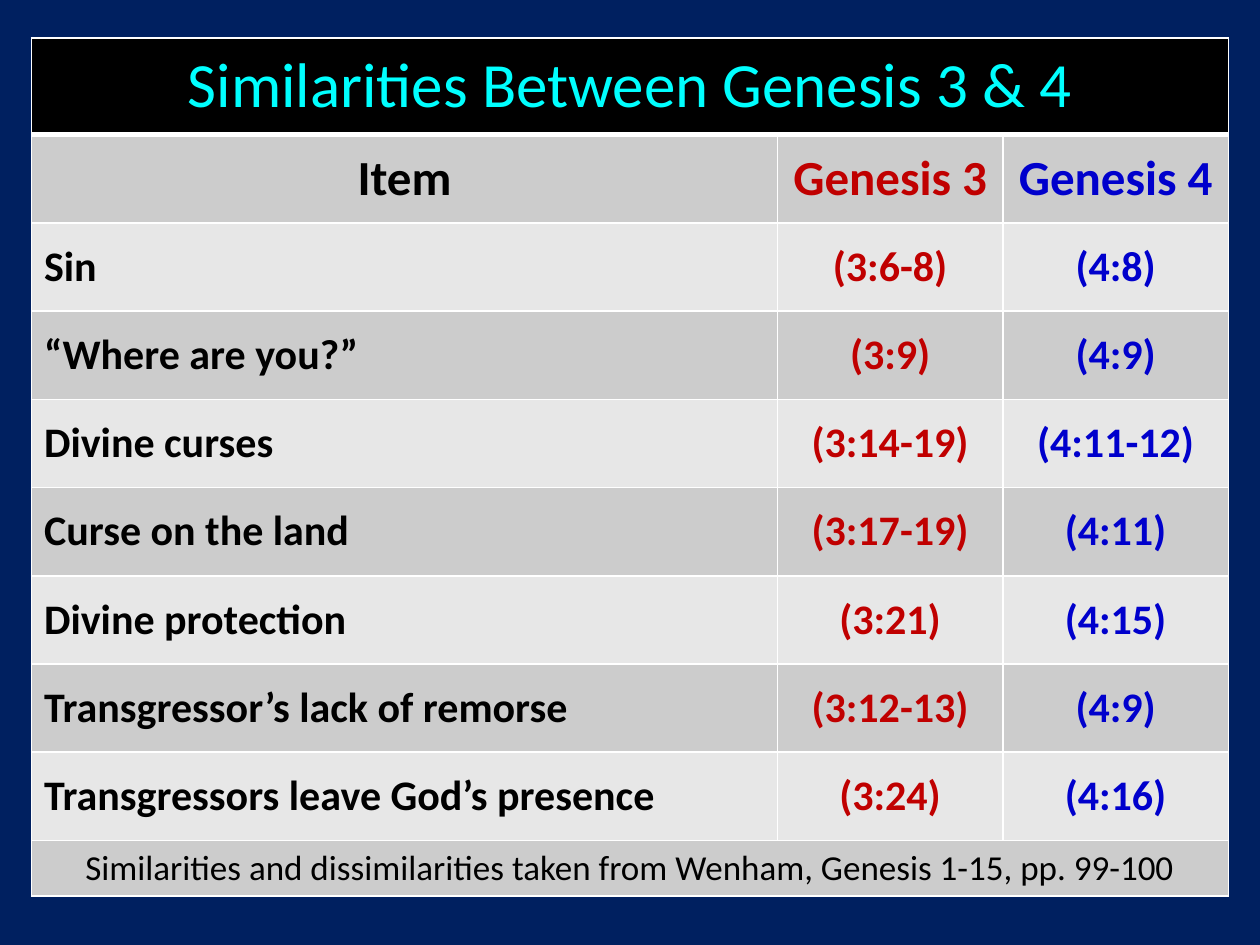
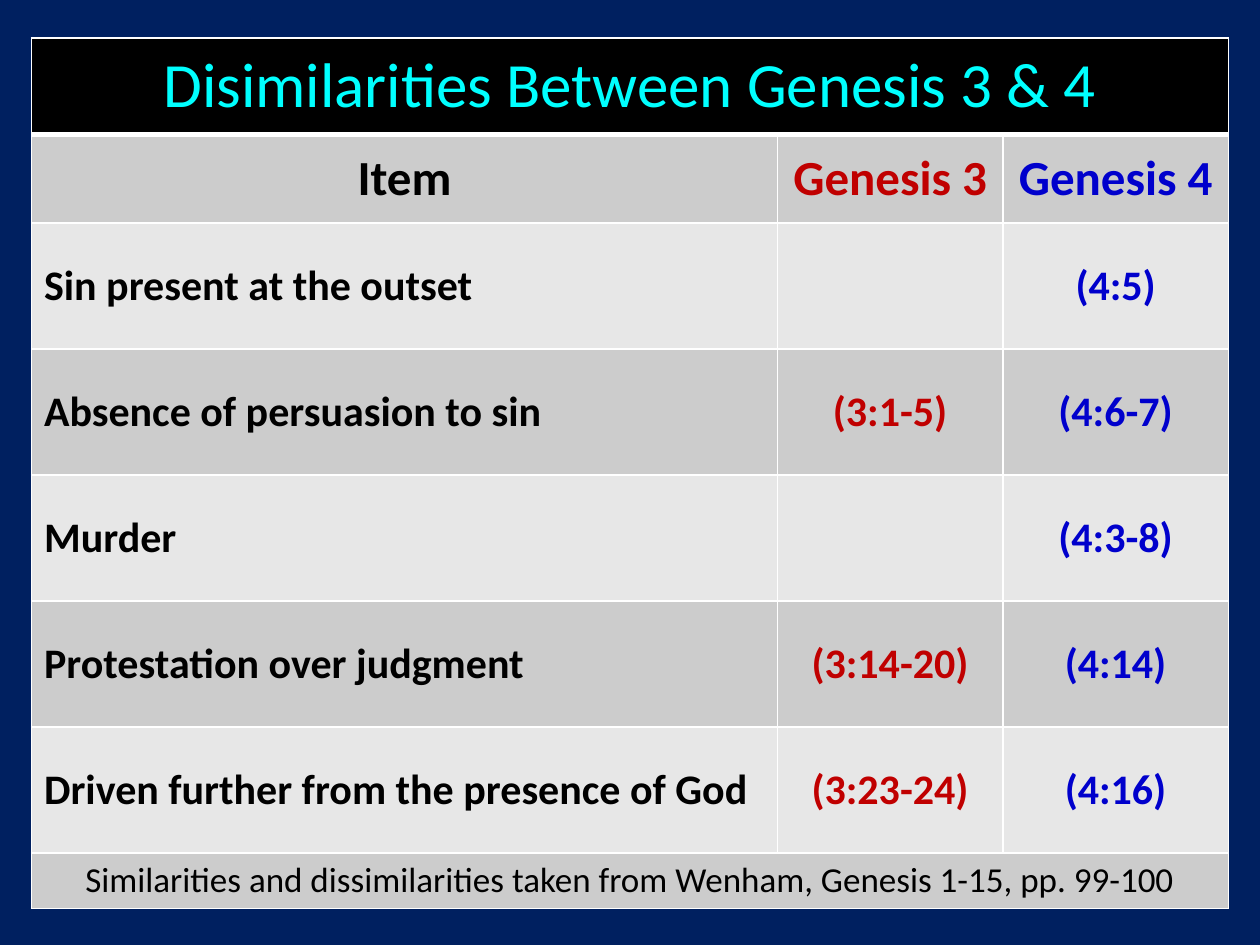
from lxml import etree
from pptx import Presentation
from pptx.dml.color import RGBColor
from pptx.enum.text import MSO_ANCHOR as Anchor, PP_ALIGN as Align
from pptx.oxml.ns import qn
from pptx.util import Inches, Pt

NAVY = RGBColor(0x00, 0x20, 0x60)
BLACK = RGBColor(0x00, 0x00, 0x00)
WHITE = RGBColor(0xFF, 0xFF, 0xFF)
CYAN = RGBColor(0x00, 0xFF, 0xFF)
RED = RGBColor(0xC0, 0x00, 0x00)
BLUE = RGBColor(0x00, 0x00, 0xCC)
LIGHT_BAND = RGBColor(0xE7, 0xE7, 0xE7)
DARK_BAND = RGBColor(0xCC, 0xCC, 0xCC)

FONT = "Calibri"
BLANK_LAYOUT = 6
LEFT, TOP = 0.25, 0.3
COLUMN_WIDTHS = (5.92, 1.79, 1.79)
COLUMN_COLORS = (BLACK, RED, BLUE)
TITLE_HEIGHT, HEADING_HEIGHT, SOURCE_HEIGHT = 0.77, 0.7, 0.4

TITLE = {"size": Pt(36), "bold": False}
HEADING = {"size": Pt(28), "bold": True}
ENTRY = {"size": Pt(24), "bold": True}
SOURCE = {"size": Pt(20), "bold": False}

HEADINGS = ("Item", "Genesis 3", "Genesis 4")
SOURCE_NOTE = "Similarities and dissimilarities taken from Wenham, Genesis 1-15, pp. 99-100"

SIMILARITIES = (
    ("Sin", "(3:6-8)", "(4:8)"),
    ("“Where are you?”", "(3:9)", "(4:9)"),
    ("Divine curses", "(3:14-19)", "(4:11-12)"),
    ("Curse on the land", "(3:17-19)", "(4:11)"),
    ("Divine protection", "(3:21)", "(4:15)"),
    ("Transgressor’s lack of remorse", "(3:12-13)", "(4:9)"),
    ("Transgressors leave God’s presence", "(3:24)", "(4:16)"),
)
DISSIMILARITIES = (
    ("Sin present at the outset", "", "(4:5)"),
    ("Absence of persuasion to sin", "(3:1-5)", "(4:6-7)"),
    ("Murder", "", "(4:3-8)"),
    ("Protestation over judgment", "(3:14-20)", "(4:14)"),
    ("Driven further from the presence of God", "(3:23-24)", "(4:16)"),
)


class ComparisonDeck:
    def __init__(self):
        self.deck = Presentation()
        self.deck.slide_width, self.deck.slide_height = Inches(10), Inches(7.5)
        self.slide = None

    def new_slide(self):
        self.slide = self.deck.slides.add_slide(self.deck.slide_layouts[BLANK_LAYOUT])
        background = self.slide.background.fill
        background.solid()
        background.fore_color.rgb = NAVY

    def style_cell(self, cell, fill, bottom_width=1):
        properties = cell._tc.get_or_add_tcPr()
        for side, width in {"L": 1, "R": 1, "T": 1, "B": bottom_width}.items():
            border = etree.SubElement(properties, qn(f"a:ln{side}"), w=str(Pt(width)))
            paint = etree.SubElement(border, qn("a:solidFill"))
            etree.SubElement(paint, qn("a:srgbClr"), val=str(WHITE))
        cell.fill.solid()
        cell.fill.fore_color.rgb = fill
        cell.vertical_anchor = Anchor.MIDDLE

    def label_cell(self, cell, text, look, color, align=Align.CENTER):
        if not text:
            return
        paragraph = cell.text_frame.paragraphs[0]
        paragraph.alignment = align
        run = paragraph.add_run()
        run.text = text
        for name, value in {"name": FONT, **look}.items():
            setattr(run.font, name, value)
        run.font.color.rgb = color

    def label_row(self, table, row, text, look, color):
        table.cell(row, 0).merge(table.cell(row, len(COLUMN_WIDTHS) - 1))
        self.label_cell(table.cell(row, 0), text, look, color)

    def comparison(self, title, entries, entry_height):
        self.new_slide()
        heights = (TITLE_HEIGHT, HEADING_HEIGHT, *[entry_height] * len(entries), SOURCE_HEIGHT)
        table = self.slide.shapes.add_table(
            len(heights), len(COLUMN_WIDTHS), Inches(LEFT), Inches(TOP),
            Inches(sum(COLUMN_WIDTHS)), Inches(sum(heights))).table
        for column, width in zip(table.columns, COLUMN_WIDTHS):
            column.width = Inches(width)
        for index, (row, height) in enumerate(zip(table.rows, heights)):
            row.height = Inches(height)
            band = DARK_BAND if index % 2 else LIGHT_BAND
            for cell in row.cells:
                if index == 0:
                    self.style_cell(cell, BLACK, bottom_width=3)
                else:
                    self.style_cell(cell, band)

        self.label_row(table, 0, title, TITLE, CYAN)
        for column, (heading, color) in enumerate(zip(HEADINGS, COLUMN_COLORS)):
            self.label_cell(table.cell(1, column), heading, HEADING, color)
        for row, entry in enumerate(entries, start=2):
            for column, (text, color) in enumerate(zip(entry, COLUMN_COLORS)):
                align = Align.CENTER if column else Align.LEFT
                self.label_cell(table.cell(row, column), text, ENTRY, color, align)
        self.label_row(table, len(heights) - 1, SOURCE_NOTE, SOURCE, BLACK)


def main():
    genesis = ComparisonDeck()
    genesis.comparison("Similarities Between Genesis 3 & 4", SIMILARITIES, 0.7)
    genesis.comparison("Disimilarities Between Genesis 3 & 4", DISSIMILARITIES, 1)
    genesis.deck.save("out.pptx")


if __name__ == "__main__":
    main()
